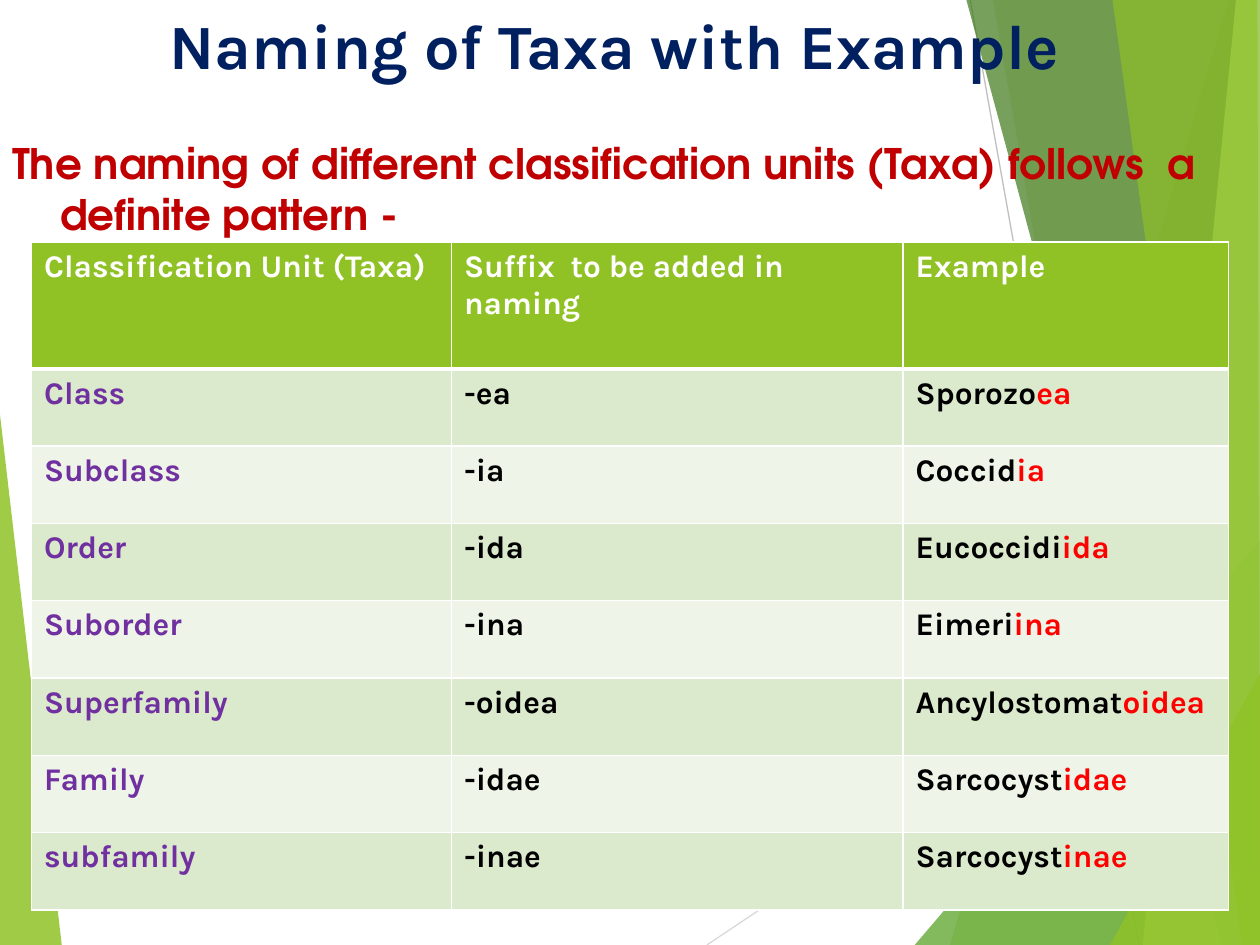
from collections import namedtuple
from dataclasses import dataclass

from lxml.etree import SubElement
from pptx import Presentation
from pptx.dml.color import RGBColor
from pptx.enum.shapes import MSO_CONNECTOR
from pptx.enum.text import MSO_ANCHOR, PP_ALIGN
from pptx.oxml.ns import qn
from pptx.util import Inches, Pt

Box = namedtuple("Box", "left top width height")


@dataclass(frozen=True)
class Theme:
    display: str = "Karla"
    lead: str = "TeX Gyre Adventor"
    title_size: int = 36
    lead_size: int = 24
    cell_size: int = 18
    navy: str = "002060"
    crimson: str = "C00000"
    purple: str = "7030A0"
    red: str = "FF0000"
    black: str = "000000"
    white: str = "FFFFFF"
    lime: str = "90C226"
    green: str = "54A021"
    forest: str = "3F7819"
    pale_lime: str = "C0E474"
    bands: tuple = ("DBE9CD", "EEF4E8")
    hairlines: tuple = ("D9D9D9", "BFBFBF")


THEME = Theme()
GRID = 1000

FACETS_BEHIND = [
    (THEME.lime, 85, [(0, 439), (0, 1000), (49, 1000)]),
]
FACETS = [
    (THEME.lime, 30, [(975, 0), (754, 1000), (1000, 1000), (1000, 0)]),
    (THEME.lime, 20, [(788, 0), (919, 1000), (1000, 1000), (1000, 0)]),
    (THEME.green, 72, [(726, 1000), (1000, 572), (1000, 1000)]),
    (THEME.forest, 70, [(767, 0), (970, 1000), (1000, 1000), (1000, 0)]),
    (THEME.pale_lime, 70, [(981, 0), (907, 1000), (1000, 1000), (1000, 0)]),
    (THEME.lime, 65, [(883, 0), (986, 1000), (1000, 1000), (998, 0)]),
    (THEME.lime, 80, [(881, 1000), (1000, 713), (1000, 1000)]),
]
HAIRLINES = [((561, 1000), (1000, 609)), ((770, 0), (904, 1000))]

HEADINGS = ["Classification Unit (Taxa)", "Suffix  to be added in naming", "Example"]
TAXA = [
    ("Class", "Sporozo", "ea"),
    ("Subclass", "Coccid", "ia"),
    ("Order", "Eucoccidi", "ida"),
    ("Suborder", "Eimeri", "ina"),
    ("Superfamily", "Ancylostomat", "oidea"),
    ("Family", "Sarcocyst", "idae"),
    ("subfamily", "Sarcocyst", "inae"),
]
COLUMN_WEIGHTS = (3.33, 3.58, 2.58)
HEADER_SHARE = 0.19


def part(box, left, top, width, height):
    return Box(
        round(box.left + box.width * left),
        round(box.top + box.height * top),
        round(box.width * width),
        round(box.height * height),
    )


def apply(target, values):
    for name, value in values.items():
        setattr(target, name, value)


def add_span(para, text, face, size, color):
    span = para.add_run()
    span.text = text
    apply(span.font, {"name": face, "size": Pt(size), "bold": True})
    span.font.color.rgb = RGBColor.from_string(color)


def add_facets(page, box, facets):
    scale = (box.width / GRID, box.height / GRID)
    for color, opacity, points in facets:
        builder = page.shapes.build_freeform(*points[0], scale=scale)
        builder.add_line_segments(points[1:], close=True)
        facet = builder.convert_to_shape(box.left, box.top)
        facet.shadow.inherit = False
        facet.line.fill.background()
        facet.fill.solid()
        facet.fill.fore_color.rgb = RGBColor.from_string(color)
        tint = facet.fill._xPr.find(qn("a:solidFill"))[0]
        SubElement(tint, qn("a:alpha"), val=str(opacity * 1000))


def add_hairlines(page, box):
    for color, ends in zip(THEME.hairlines, HAIRLINES):
        places = [
            round(start + length * value / GRID)
            for point in ends
            for start, length, value in zip(box[:2], box[2:], point)
        ]
        hairline = page.shapes.add_connector(MSO_CONNECTOR.STRAIGHT, *places)
        hairline.line.width = Pt(0.75)
        hairline.line.color.rgb = RGBColor.from_string(color)
        SubElement(hairline._element.spPr, qn("a:effectLst"))


def add_backdrop(page, box):
    add_facets(page, box, FACETS_BEHIND)
    add_hairlines(page, box)
    add_facets(page, box, FACETS)


def add_text(page, box, text, frame_format, face, size, color):
    frame = page.shapes.add_textbox(*box).text_frame
    apply(frame, {"word_wrap": True, "vertical_anchor": MSO_ANCHOR.TOP, **frame_format})
    para = frame.paragraphs[0]
    add_span(para, text, face, size, color)
    return para


def add_title(page, box):
    para = add_text(page, box, "Naming of Taxa with Example", {},
                    THEME.display, THEME.title_size, THEME.navy)
    para.alignment = PP_ALIGN.CENTER


def add_lead(page, box):
    para = add_text(
        page, box,
        "The naming of different classification units (Taxa) follows  a definite pattern -",
        {"margin_top": round(box.height * 0.085)},
        THEME.lead, THEME.lead_size, THEME.crimson,
    )
    indent = Inches(0.38)
    para._p.get_or_add_pPr().attrib.update({"marL": str(indent), "indent": str(-indent)})


def add_borders(cell, widths):
    properties = cell._tc.get_or_add_tcPr()
    for side, width in zip("LRTB", widths):
        border = SubElement(properties, qn(f"a:ln{side}"), w=str(Pt(width)))
        paint = SubElement(border, qn("a:solidFill"))
        SubElement(paint, qn("a:srgbClr"), val=THEME.white)


def fill_cell(cell, spans, color, widths):
    add_borders(cell, widths)
    cell.fill.solid()
    cell.fill.fore_color.rgb = RGBColor.from_string(color)
    for text, ink in spans:
        add_span(cell.text_frame.paragraphs[0], text, THEME.display, THEME.cell_size, ink)


def add_taxa_table(page, box):
    table = page.shapes.add_table(len(TAXA) + 1, len(HEADINGS), *box).table
    for column, weight in zip(table.columns, COLUMN_WEIGHTS):
        column.width = round(box.width * weight / sum(COLUMN_WEIGHTS))
    header_height = round(box.height * HEADER_SHARE)
    body_height = round((box.height - header_height) / len(TAXA))
    rows = [[[(heading, THEME.white)] for heading in HEADINGS]]
    rows += [
        [
            [(unit, THEME.purple)],
            [("-" + suffix, THEME.black)],
            [(stem, THEME.black), (suffix, THEME.red)],
        ]
        for unit, stem, suffix in TAXA
    ]
    for number, cells in enumerate(rows):
        table.rows[number].height = body_height if number else header_height
        color = THEME.bands[(number - 1) % 2] if number else THEME.lime
        widths = (1, 1, 3 if number == 1 else 1, 1 if number else 3)
        for column, spans in enumerate(cells):
            fill_cell(table.cell(number, column), spans, color, widths)


def main():
    deck = Presentation()
    apply(deck, {"slide_width": Inches(10), "slide_height": Inches(7.5)})
    page = deck.slides.add_slide(deck.slide_layouts[6])
    whole = Box(0, 0, deck.slide_width, deck.slide_height)
    add_backdrop(page, whole)
    add_lead(page, part(whole, 0, 1 / 15, 1, 14 / 15))
    add_title(page, part(whole, 0, 0, 0.975, 0.095))
    add_taxa_table(page, part(whole, 0.025, 0.256, 0.95, 0.707))
    deck.save("out.pptx")


if __name__ == "__main__":
    main()
